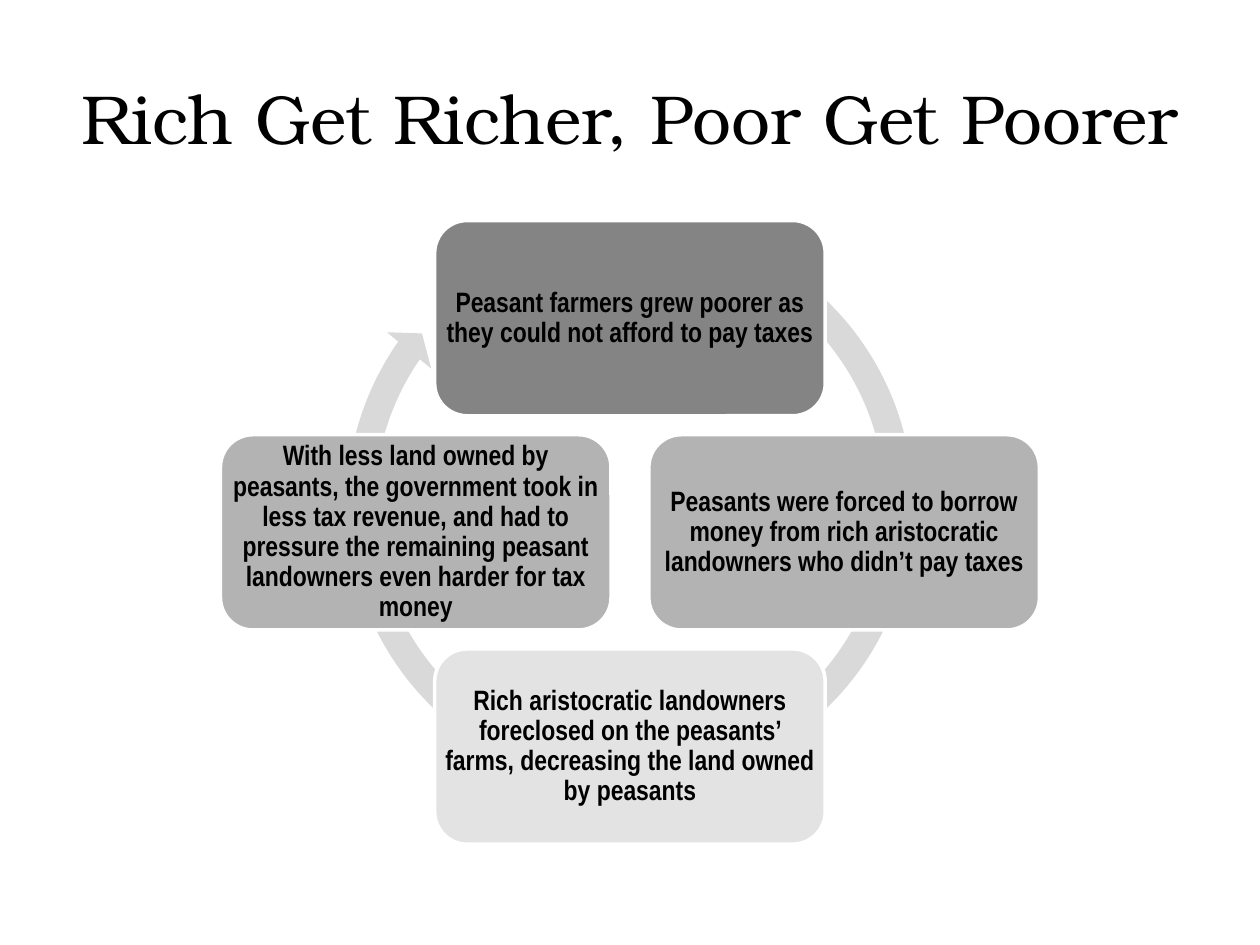
from pptx import Presentation
from pptx.dml.color import RGBColor as RGB
from pptx.enum.shapes import MSO_SHAPE as Kind
from pptx.enum.text import MSO_ANCHOR as Anchor, PP_ALIGN as Align
from pptx.util import Pt

INK = {
    "text": "000000",
    "edge": "FFFFFF",
    "ring": "D9D9D9",
    "dark": "848484",
    "mid": "B3B3B3",
    "light": "E3E3E3",
}
TITLE = {"name": "TeX Gyre Bonum", "size": Pt(39.6)}
LABEL = {"name": "Arial Narrow", "size": Pt(16), "bold": True}
FRAME = {"word_wrap": True, "vertical_anchor": Anchor.MIDDLE}
TIGHT = {"margin_left": 0, "margin_right": 0, "margin_top": 0, "margin_bottom": 0}
BEND = (0.04668, 2.729, 128.918, 179.897, 0.048)
MID_X, MID_Y = 360, 304.2
STEP = 122.4
WIDE, HIGH = 223.2, 111.6
RING = 340.4
STEPS = (
    (0, -1, "dark", "Peasant farmers grew poorer as they could not afford to pay taxes"),
    (1, 0, "mid", "Peasants were forced to borrow money from rich aristocratic "
                  "landowners who didn’t pay taxes"),
    (0, 1, "light", "Rich aristocratic landowners foreclosed on the peasants’ farms, "
                    "decreasing the land owned by peasants"),
    (-1, 0, "mid", "With less land owned by peasants, the government took in less tax "
                   "revenue, and had to pressure the remaining peasant landowners "
                   "even harder for tax money"),
)


def apply(item, look):
    for key, value in look.items():
        setattr(item, key, value)


def paint(fill, tone):
    fill.solid()
    fill.fore_color.rgb = RGB.from_string(INK[tone])


def write(shape, text, font, frame, space):
    box = shape.text_frame
    apply(box, frame)
    para = box.paragraphs[0]
    apply(para, {"alignment": Align.CENTER, "line_spacing": space})
    run = para.add_run()
    run.text = text
    apply(run.font, font)
    run.font.color.rgb = RGB.from_string(INK["text"])


def add_title(slide, text):
    box = slide.shapes.add_textbox(Pt(36), Pt(21.6), Pt(648), Pt(90))
    write(box, text, TITLE, FRAME, 1.0)


def add_block(slide, kind, x, y, wide, high, tone):
    block = slide.shapes.add_shape(
        kind, Pt(x - wide / 2), Pt(y - high / 2), Pt(wide), Pt(high))
    block.shadow.inherit = False
    paint(block.fill, tone)
    return block


def add_ring(slide):
    ring = add_block(slide, Kind.CIRCULAR_ARROW, MID_X, 288.2, RING, RING, "ring")
    ring.line.fill.background()
    for i, bend in enumerate(BEND):
        ring.adjustments[i] = bend


def add_step(slide, col, row, tone, text):
    card = add_block(slide, Kind.ROUNDED_RECTANGLE, MID_X + col * STEP,
                     MID_Y + row * STEP, WIDE, HIGH, tone)
    paint(card.line.fill, "edge")
    card.line.width = Pt(2)
    write(card, text, LABEL, FRAME | TIGHT, 0.9)


def main():
    deck = Presentation()
    apply(deck, {"slide_width": Pt(720), "slide_height": Pt(540)})
    slide = deck.slides.add_slide(deck.slide_layouts[6])
    add_title(slide, "Rich Get Richer, Poor Get Poorer")
    add_ring(slide)
    for step in STEPS:
        add_step(slide, *step)
    deck.save("out.pptx")


if __name__ == "__main__":
    main()
